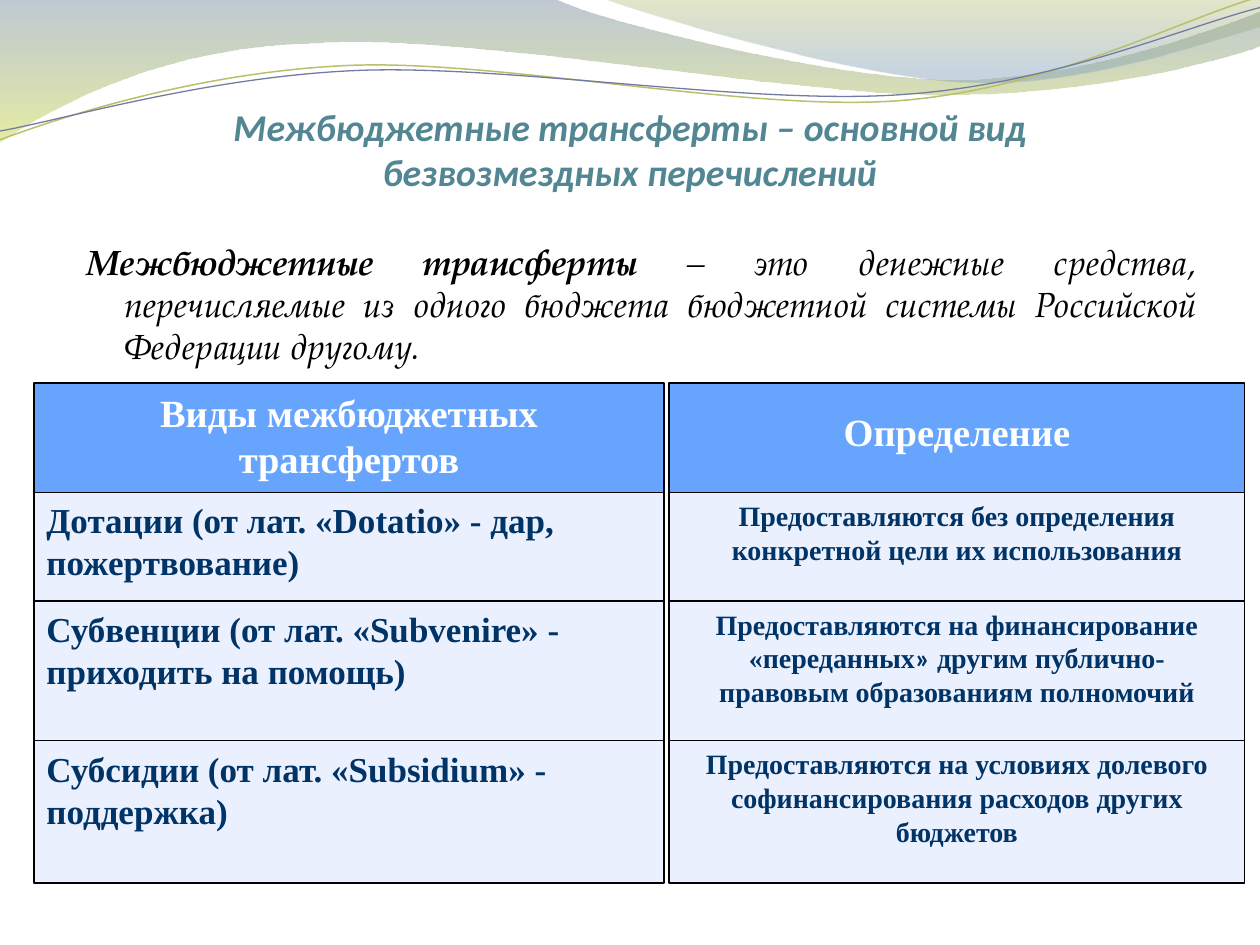
from lxml.etree import SubElement
from pptx import Presentation
from pptx.dml.color import RGBColor
from pptx.enum.shapes import MSO_SHAPE
from pptx.enum.text import MSO_ANCHOR, MSO_AUTO_SIZE, PP_ALIGN
from pptx.oxml.ns import qn
from pptx.util import Inches, Pt

SLIDE_WIDTH, SLIDE_HEIGHT = 10, 7.5
COLUMNS = [(0.27, 5), (5.31, 4.57)]
ROW_EDGES = [3.04, 3.91, 4.77, 5.88, 7]
ROW_OVERLAP = 0.01
UNITS_PER_INCH = 1000

HEADER = {"size": Pt(22), "name": "Times New Roman", "bold": True, "color": "FFFFFF"}
TERM = {"size": Pt(20), "name": "Times New Roman", "bold": True, "color": "003366"}
MEANING = {**TERM, "size": Pt(16)}
TITLE = {"size": Pt(21.6), "name": "Calibri", "bold": True, "italic": True, "color": "528693"}
LEAD = {"size": Pt(20), "name": "TeX Gyre Pagella", "bold": True, "italic": True, "color": "000000"}
QUOTE = {**MEANING, "name": "Calibri"}

HEADINGS = ["Виды межбюджетных трансфертов", "Определение"]
TERMS = [
    ["Дотации (от лат. «Dotatio» - дар,", "пожертвование)"],
    ["Субвенции (от лат. «Subvenire» -", "приходить на помощь)"],
    ["Субсидии (от лат. «Subsidium» -", "поддержка)"],
]
MEANINGS = [
    ["Предоставляются без определения", "конкретной цели их использования"],
    [
        "Предоставляются на финансирование",
        [("«переданных", MEANING), ("»", QUOTE), (" другим публично-", MEANING)],
        "правовым образованиям полномочий",
    ],
    ["Предоставляются на условиях долевого", "софинансирования расходов других", "бюджетов"],
]

BROAD_WAVE = [
    (0, 0), (4.4, -0.01),
    (4.76, 0.17, 6.64, 0.63, 7.58, 0.63), (8.53, 0.63, 9.58, 0.26, 10, 0.09), (10.01, 0.36),
    (9.83, 0.44, 8.7, 0.76, 7.46, 0.75), (6.22, 0.75, 3.82, 0.28, 2.57, 0.34),
    (1.29, 0.36, 0.46, 0.83, -0.01, 1.13), (0, 0),
]
CORNER_WAVE = [
    (4.79, -0.01), (5.09, 0.11, 6.82, 0.62, 7.69, 0.65),
    (8.56, 0.69, 9.61, 0.32, 10, 0.21), (10, 0), (4.79, -0.01),
]
GREEN_LINE = [
    (0, 1.11), (0.48, 0.93, 1.58, 0.57, 2.77, 0.52),
    (3.95, 0.47, 5.93, 0.89, 7.13, 0.8), (8.33, 0.71, 9.38, 0.15, 9.98, -0.02),
]
VIOLET_LINE = [
    (0, 1.04), (0.47, 0.96, 1.64, 0.61, 2.83, 0.56),
    (4.03, 0.51, 5.97, 0.84, 7.17, 0.75), (8.36, 0.67, 9.41, 0.21, 10, 0.06),
]


def rgb(value):
    return RGBColor.from_string(value)


def set_values(target, values):
    for name, value in values.items():
        setattr(target, name, value)


def add_run(paragraph, text, style):
    run = paragraph.add_run()
    run.text = text
    set_values(run.font, {name: value for name, value in style.items() if name != "color"})
    run.font.color.rgb = rgb(style["color"])


def write_lines(text_frame, lines, style, alignment):
    for index, line in enumerate(lines):
        paragraph = text_frame.add_paragraph() if index else text_frame.paragraphs[0]
        paragraph.alignment = alignment
        for text, run_style in [(line, style)] if isinstance(line, str) else line:
            add_run(paragraph, text, run_style)


def bend_segments(shape, segments):
    lines = list(shape.element.iter(qn("a:lnTo")))
    for segment in segments[1:]:
        count = len(segment) // 2
        group, lines = lines[:count], lines[count:]
        if count == 3:
            outline = group[0].getparent()
            curve = SubElement(outline, qn("a:cubicBezTo"))
            group[0].addprevious(curve)
            for line in group:
                curve.append(line[0])
                outline.remove(line)


def add_curve(slide, segments, close):
    points = [
        (segment[index] * UNITS_PER_INCH, segment[index + 1] * UNITS_PER_INCH)
        for segment in segments for index in range(0, len(segment), 2)
    ]
    builder = slide.shapes.build_freeform(*points[0], scale=Inches(1) / UNITS_PER_INCH)
    builder.add_line_segments(points[1:], close=close)
    shape = builder.convert_to_shape()
    bend_segments(shape, segments)
    shape.shadow.inherit = False
    return shape


def add_wave(slide, segments, stops):
    shape = add_curve(slide, segments, True)
    shape.line.fill.background()
    shape.fill.gradient()
    shape.fill.gradient_angle = 270
    for stop, (position, color, opacity) in zip(shape.fill.gradient_stops, stops):
        stop.position = position
        stop.color.rgb = rgb(color)
    colors = shape.element.spPr.iter(qn("a:srgbClr"))
    for element, (position, color, opacity) in zip(colors, stops):
        SubElement(element, qn("a:alpha")).set("val", str(opacity * 1000))


def add_wave_line(slide, segments, color, width):
    shape = add_curve(slide, segments, False)
    shape.fill.background()
    shape.line.color.rgb = rgb(color)
    shape.line.width = Pt(width)


def place_title(slide, lines):
    title = slide.shapes.title
    slide.shapes.element.append(title.element)
    set_values(title, {"left": Inches(0.5), "top": Inches(0.81),
                       "width": Inches(9), "height": Inches(0.73)})
    set_values(title.text_frame, {
        "word_wrap": True, "auto_size": MSO_AUTO_SIZE.NONE, "vertical_anchor": MSO_ANCHOR.BOTTOM,
        "margin_left": 0, "margin_right": 0, "margin_top": Inches(0.05), "margin_bottom": 0,
    })
    paragraph = title.text_frame.paragraphs[0]
    paragraph.alignment = PP_ALIGN.CENTER
    for index, line in enumerate(lines):
        if index:
            paragraph.add_line_break()
        add_run(paragraph, line, TITLE)


def add_definition(slide, term, meaning):
    box = slide.shapes.add_textbox(Inches(0.59), Inches(1.86), Inches(9), Inches(1.1))
    box.text_frame.word_wrap = True
    runs = [(term, LEAD), (meaning, {**LEAD, "bold": False})]
    write_lines(box.text_frame, [runs], LEAD, PP_ALIGN.JUSTIFY)
    paragraph = box.text_frame.paragraphs[0]
    paragraph.space_before = Pt(4)
    properties = paragraph._p.get_or_add_pPr()
    properties.set("marL", str(Inches(0.3)))
    properties.set("indent", str(Inches(-0.3)))


def add_cell(slide, column, row, lines, style, alignment):
    left, width = COLUMNS[column]
    top = ROW_EDGES[row]
    height = ROW_EDGES[row + 1] - top + ROW_OVERLAP
    shape = slide.shapes.add_shape(
        MSO_SHAPE.RECTANGLE, Inches(left), Inches(top), Inches(width), Inches(height))
    shape.shadow.inherit = False
    shape.fill.solid()
    shape.fill.fore_color.rgb = rgb("EBF0FF" if row else "66A4FE")
    shape.line.color.rgb = rgb("000000")
    shape.line.width = Pt(0.75)
    set_values(shape.text_frame, {
        "word_wrap": True,
        "vertical_anchor": MSO_ANCHOR.TOP if row else MSO_ANCHOR.MIDDLE,
        "margin_bottom": Inches(0.05 if row else 0.1 + 0.06 * column),
    })
    write_lines(shape.text_frame, lines, style, alignment)


def main():
    presentation = Presentation()
    presentation.slide_width = Inches(SLIDE_WIDTH)
    presentation.slide_height = Inches(SLIDE_HEIGHT)
    slide = presentation.slides.add_slide(presentation.slide_layouts[5])

    add_wave(slide, BROAD_WAVE, [(0, "72889B", 45), (1, "D3DE57", 55)])
    add_wave(slide, CORNER_WAVE, [(0, "A4AC50", 30), (0.8, "84A3BD", 45)])
    add_wave_line(slide, GREEN_LINE, "B9C06C", 0.85)
    add_wave_line(slide, VIOLET_LINE, "727CA3", 0.75)
    place_title(slide, ["Межбюджетные трансферты – основной вид", "безвозмездных перечислений"])
    add_definition(
        slide, "Межбюджетные трансферты",
        " – это денежные средства, перечисляемые из одного бюджета бюджетной системы "
        "Российской Федерации другому.")

    columns = [(TERMS, TERM, PP_ALIGN.LEFT), (MEANINGS, MEANING, PP_ALIGN.CENTER)]
    for column, (cells, style, alignment) in enumerate(columns):
        add_cell(slide, column, 0, [HEADINGS[column]], HEADER, PP_ALIGN.CENTER)
        for row, lines in enumerate(cells, start=1):
            add_cell(slide, column, row, lines, style, alignment)
    presentation.save("out.pptx")


if __name__ == "__main__":
    main()
